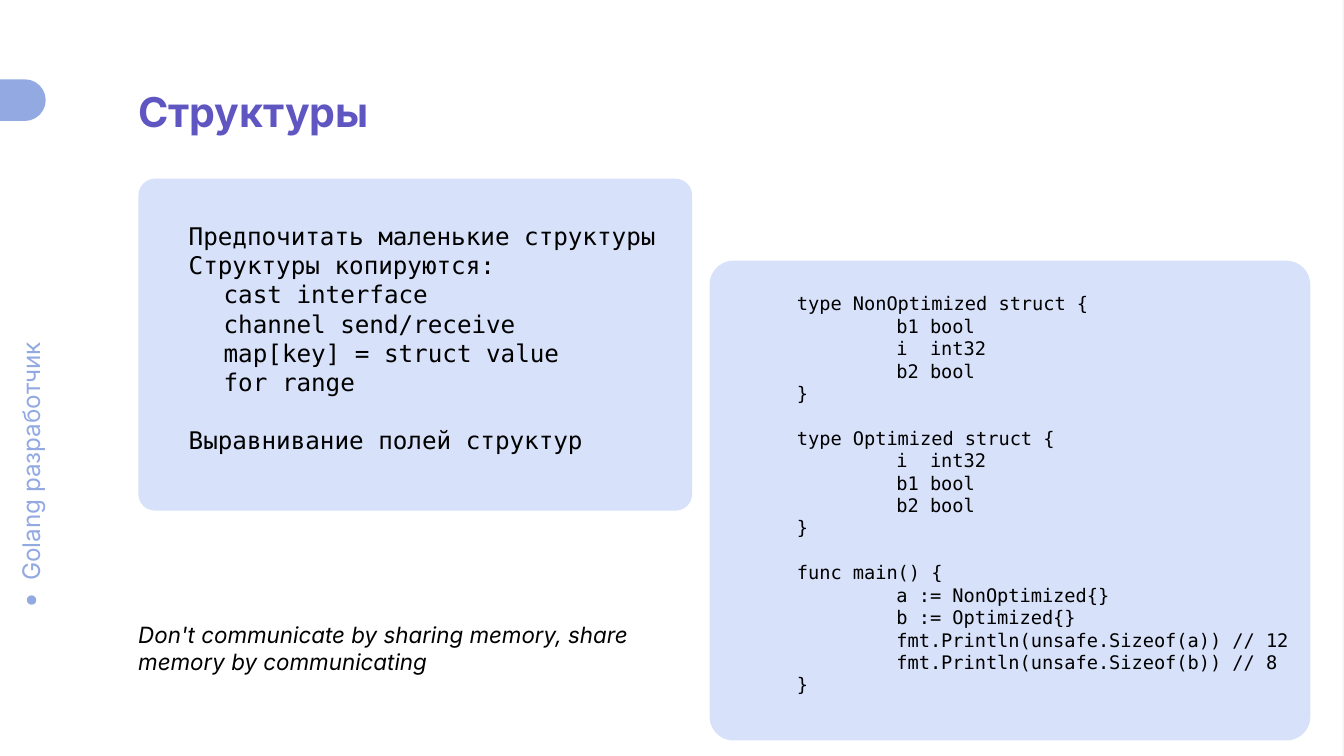
import pptx
import pptx.util
import pptx.dml.color
import pptx.enum.shapes
import pptx.enum.text

Inches, Pt = pptx.util.Inches, pptx.util.Pt
Shape = pptx.enum.shapes.MSO_SHAPE
Anchor = pptx.enum.text.MSO_ANCHOR

SANS, MONO = "Inter", "DejaVu Sans Mono"
BLUE, PALE, PURPLE, BLACK = "92A9E2", "D7E1F9", "6056C2", "000000"
WIDE = 10
HIGH = WIDE * 9 / 16

TITLE = "Структуры"
COURSE = "Golang разработчик"
QUOTE = "Don't communicate by sharing memory, share memory by communicating"

# Each group is set off from the one before by an empty line's height.
# Notes are (first-line indent, text).
NOTES = [
    [
        (0, "Предпочитать маленькие структуры"),
        (0, "Структуры копируются:"),
        (0.26, "cast interface"),
        (0.26, "channel send/receive"),
        (0.26, "map[key] = struct value"),
        (0.26, "for range"),
    ],
    [(0, "Выравнивание полей структур")],
]
CODE = [
    """type NonOptimized struct {
\tb1 bool
\ti  int32
\tb2 bool
}""",
    """type Optimized struct {
\ti  int32
\tb1 bool
\tb2 bool
}""",
    """func main() {
\ta := NonOptimized{}
\tb := Optimized{}
\tfmt.Println(unsafe.Sizeof(a)) // 12
\tfmt.Println(unsafe.Sizeof(b)) // 8
}""",
]


def color(code):
    return pptx.dml.color.RGBColor.from_string(code)


def style(para, face, size, code, bold=False, italic=False):
    font = para.font
    font.name, font.size = face, Pt(size)
    font.bold, font.italic = bold, italic
    font.color.rgb = color(code)
    para.alignment = pptx.enum.text.PP_ALIGN.LEFT


def frame(shape, top, bottom, anchor=Anchor.TOP):
    text = shape.text_frame
    text.word_wrap = True
    text.vertical_anchor = anchor
    text.margin_left = text.margin_right = Inches(0.1)
    text.margin_top, text.margin_bottom = Inches(top), Inches(bottom)
    return text


def block(slide, kind, box, fill, adjust=None):
    shape = slide.shapes.add_shape(kind, *map(Inches, box))
    shape.shadow.inherit = False
    shape.fill.solid()
    shape.fill.fore_color.rgb = color(fill)
    shape.line.fill.background()
    if adjust is not None:
        shape.adjustments[0] = adjust
    return shape


def label(slide, box, words, size, code, italic=False):
    shape = slide.shapes.add_textbox(*map(Inches, box))
    text = frame(shape, 0.1, 0.1)
    text.text = words
    style(text.paragraphs[0], SANS, size, code, italic=italic)
    return shape


def panel(slide, box, groups, size):
    """Draw a rounded card holding groups of (indent, text) lines."""
    card = block(slide, Shape.ROUNDED_RECTANGLE, box, PALE, 0.05)
    text = frame(card, 0, 0.1, Anchor.MIDDLE)
    para = text.paragraphs[0]
    for g, group in enumerate(groups):
        for n, (indent, words) in enumerate(group):
            if g or n:
                para = text.add_paragraph()
            para.text = words
            style(para, MONO, size, BLACK)
            if g and not n:
                para.space_before = Pt(round(size * 1.2, 1))
            props = para._p.get_or_add_pPr()
            props.set("marL", str(Inches(0.24)))
            props.set("indent", str(Inches(indent)))
            props.set("defTabSz", str(Inches(1)))


def main():
    deck = pptx.Presentation()
    deck.slide_width, deck.slide_height = Inches(WIDE), Inches(HIGH)
    slide = deck.slides.add_slide(deck.slide_layouts[5])
    slide.background.fill.solid()
    slide.background.fill.fore_color.rgb = color("F1F4FF")

    block(slide, Shape.RECTANGLE, (-0.01, 0, WIDE, HIGH), "FFFFFF")
    label(slide, (-0.77, 3.21, 2, 0.42), COURSE, 13, BLUE).rotation = 270
    block(slide, Shape.OVAL, (0.2, 4.43, 0.07, 0.07), BLUE)
    block(slide, Shape.ROUNDED_RECTANGLE, (-0.38, 0.59, 0.72, 0.31), BLUE, 0.5)

    title = slide.shapes.title
    title.left, title.top = Inches(0.93), Inches(0.59)
    title.width, title.height = Inches(6.12), Inches(0.47)
    text = frame(title, 0.05, 0.05)
    text.auto_size = pptx.enum.text.MSO_AUTO_SIZE.NONE
    text.text = TITLE
    style(text.paragraphs[0], SANS, 22, PURPLE, bold=True)
    slide.shapes.element.append(title.element)  # bring above the white sheet

    panel(slide, (1.03, 1.33, 4.12, 2.47), NOTES, 13)
    code = [[(0.26, line) for line in part.split("\n")] for part in CODE]
    panel(slide, (5.28, 1.94, 4.47, 3.57), code, 10)
    label(slide, (0.93, 4.52, 4.22, 0.61), QUOTE, 12, BLACK, italic=True)

    deck.save("out.pptx")


if __name__ == "__main__":
    main()
